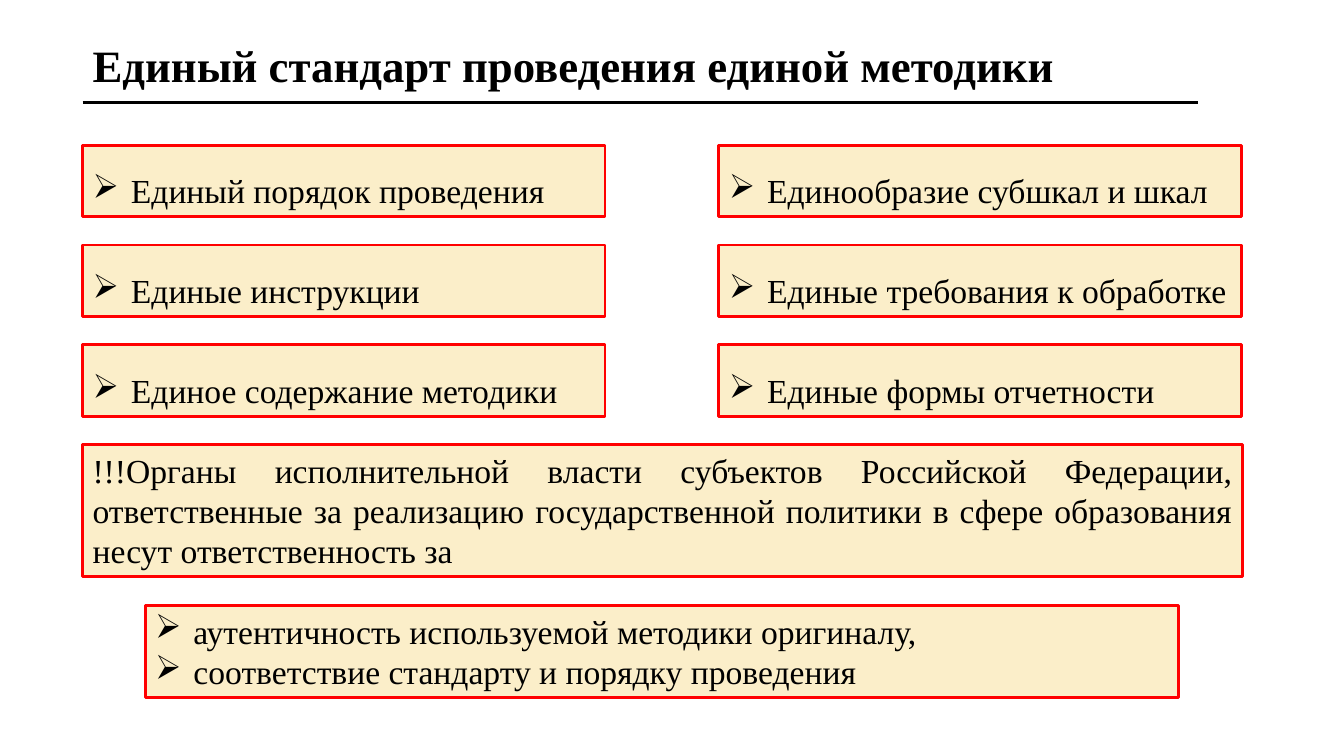
from lxml import etree
from pptx import Presentation
from pptx.dml.color import RGBColor
from pptx.enum.shapes import MSO_CONNECTOR, MSO_SHAPE
from pptx.enum.text import MSO_ANCHOR, MSO_AUTO_SIZE, PP_ALIGN
from pptx.oxml.ns import qn
from pptx.util import Inches, Pt

COLORS = {"ink": "000000", "cream": "FBEEC9", "red": "FF0000"}
FONT = "Times New Roman"
LEFT = 0.82

TITLE = "Единый стандарт проведения единой методики"
STANDARDS = [
    ["Единый порядок проведения", "Единые инструкции", "Единое содержание методики"],
    ["Единообразие субшкал и шкал", "Единые требования к обработке", "Единые формы отчетности"],
]
AUTHORITIES = (
    "!!!Органы исполнительной власти субъектов Российской Федерации, "
    "ответственные за реализацию государственной политики в сфере образования "
    "несут ответственность за"
)
DUTIES = [
    "аутентичность используемой методики оригиналу,",
    "соответствие стандарту и порядку проведения",
]


def color(name):
    return RGBColor.from_string(COLORS[name])


def style_font(paragraph, size, bold=False):
    font = paragraph.font
    font.name = FONT
    font.size = Pt(size)
    font.bold = bold
    font.color.rgb = color("ink")


def add_bullet(paragraph):
    """Give the paragraph an arrow bullet with a hanging indent."""
    properties = paragraph._p.get_or_add_pPr()
    properties.set("marL", str(Inches(0.38)))
    properties.set("indent", str(Inches(-0.38)))
    etree.SubElement(properties, qn("a:buChar")).set("char", "➢")
    # The schema wants the bullet ahead of the default run properties.
    properties.append(properties.find(qn("a:defRPr")))


def add_heading(slide, left, top, width, height):
    heading = slide.shapes.add_textbox(
        Inches(left), Inches(top), Inches(width), Inches(height))
    heading.text_frame.word_wrap = False
    heading.text_frame.auto_size = MSO_AUTO_SIZE.SHAPE_TO_FIT_TEXT
    paragraph = heading.text_frame.paragraphs[0]
    paragraph.text = TITLE
    style_font(paragraph, 32, bold=True)

    rule_y = Inches(top + height + 0.05)
    rule = slide.shapes.add_connector(
        MSO_CONNECTOR.STRAIGHT, Inches(left), rule_y, Inches(left + 11.06), rule_y)
    rule.line.color.rgb = color("ink")
    rule.line.width = Pt(2)
    etree.SubElement(rule._element.spPr, qn("a:effectLst"))


def add_panel(slide, left, top, width, height, lines,
              bullets=True, spacing=None, align=PP_ALIGN.LEFT):
    """Add a red-framed cream box with one paragraph per line."""
    panel = slide.shapes.add_shape(
        MSO_SHAPE.RECTANGLE, Inches(left), Inches(top), Inches(width), Inches(height))
    panel.shadow.inherit = False
    panel.fill.solid()
    panel.fill.fore_color.rgb = color("cream")
    panel.line.color.rgb = color("red")
    panel.line.width = Pt(2)

    frame = panel.text_frame
    frame.word_wrap = True
    frame.auto_size = MSO_AUTO_SIZE.SHAPE_TO_FIT_TEXT
    frame.vertical_anchor = MSO_ANCHOR.TOP
    for index, line in enumerate(lines):
        paragraph = frame.add_paragraph() if index else frame.paragraphs[0]
        paragraph.text = line
        paragraph.alignment = align
        if spacing:
            paragraph.line_spacing = spacing
        style_font(paragraph, 24)
        if bullets:
            add_bullet(paragraph)


def add_standards(slide, left, top, column_step, row_step):
    for column, standards in enumerate(STANDARDS):
        for row, standard in enumerate(standards):
            add_panel(slide, left + column * column_step, top + row * row_step,
                      5.18, 0.71, [standard], spacing=1.5)


def main():
    presentation = Presentation()
    presentation.slide_width = Inches(13.33)
    presentation.slide_height = Inches(7.5)
    slide = presentation.slides.add_slide(presentation.slide_layouts[6])

    add_heading(slide, LEFT, 0.33, 9.84, 0.64)
    add_standards(slide, LEFT, 1.44, column_step=6.31, row_step=0.99)
    add_panel(slide, LEFT, 4.41, 11.5, 1.31, [AUTHORITIES],
              bullets=False, align=PP_ALIGN.JUSTIFY)
    add_panel(slide, 1.44, 6.01, 10.25, 0.91, DUTIES)

    presentation.save("out.pptx")


if __name__ == "__main__":
    main()
